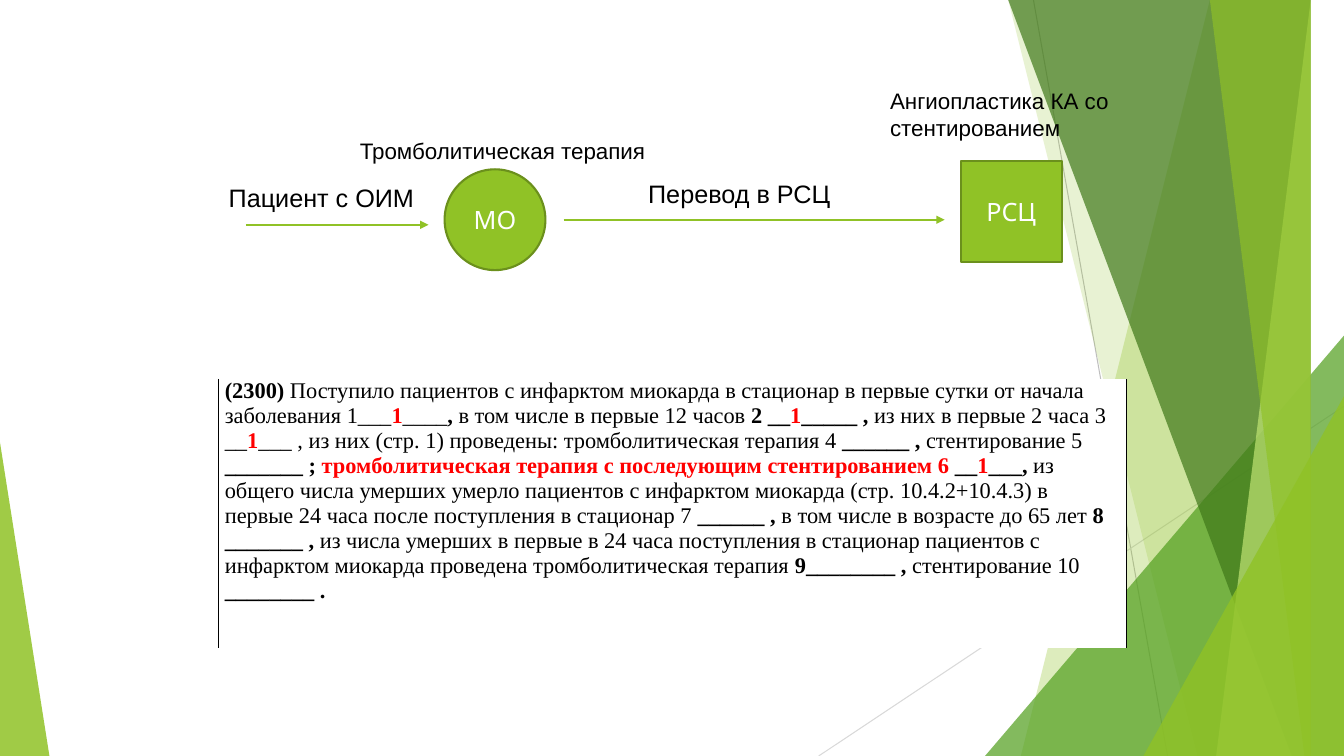
import pptx
import pptx.util
import pptx.oxml
import pptx.oxml.ns
import pptx.dml.color
import pptx.enum.shapes
import pptx.enum.text
from pptx.util import Inches

COLORS = {
    "green": "90C226", "leaf": "54A021", "forest": "3F7819", "lime": "C0E474",
    "outline": "6B901C", "gray": "BFBFBF", "pale": "D9D9D9",
    "black": "000000", "white": "FFFFFF", "red": "FF0000",
}
WIDTH, HEIGHT = 13.33, 7.5

# Backdrop, back to front
RAYS = [((10.25, 0), (11.58, HEIGHT), "gray"), ((WIDTH, 4.03), (8.12, HEIGHT), "pale")]
# Bands reach the right edge: top x, bottom x. Triangles: left, top, width, apex
BACKDROP = [
    ("band", (12.28, 10.04), "green", 30),
    ("band", (10.5, 11.83), "green", 20),
    ("triangle", (9.77, 3.33, 3.56, 1), "leaf", 72),
    ("band", (10.21, 12.91), "forest", 70),
    ("band", (13.03, 11.92), "lime", 70),
    ("band", (11.96, 13.18), "green", 65),
    ("triangle", (11.34, 3.93, 1.99, 1), "green", 80),
    ("triangle", (0, 4.39, 0.49, 0), "green", 85),
]

# Patient route
STATIONS = [("МО", "OVAL", 4.41, 1.68), ("РСЦ", "RECTANGLE", 9.53, 1.6)]
ARROWS = [(2.44, 4.25, 2.23), (5.59, 9.37, 2.18)]
LABELS = [
    ("Тромболитическая терапия", (3.47, 1.31, 4.53, 0.37), 16),
    ("Перевод в РСЦ", (6.33, 1.72, 4.02, 0.4), 18),
    ("Пациент с ОИМ", (2.17, 1.76, 2.17, 0.4), 18),
    ("Ангиопластика КА со стентированием", (8.73, 0.82, 2.6, 0.64), 16),
]

# Report form: text, bold, color
REPORT = [
    ("(2300)", True, "black"),
    (" Поступило пациентов с инфарктом миокарда в стационар в первые сутки "
     "от начала заболевания 1___", False, "black"),
    ("1", True, "red"),
    ("____", False, "black"),
    (", ", True, "black"),
    ("в том числе в первые 12 часов ", False, "black"),
    ("2 __", True, "black"),
    ("1", True, "red"),
    ("_____ , ", True, "black"),
    ("из них в первые 2 часа 3 __", False, "black"),
    ("1", True, "red"),
    ("___ , из них (стр. 1) проведены: тромболитическая терапия 4", False, "black"),
    (" ______ , ", True, "black"),
    ("стентирование 5", False, "black"),
    (" _______ ; ", True, "black"),
    ("тромболитическая терапия с последующим стентированием 6 ", True, "red"),
    ("__", True, "black"),
    ("1", True, "red"),
    ("___, ", True, "black"),
    ("из общего числа умерших умерло пациентов с инфарктом миокарда "
     "(стр. 10.4.2+10.4.3) в первые 24 часа после поступления в стационар 7",
     False, "black"),
    (" ______ , ", True, "black"),
    ("в том числе в возрасте до 65 лет", False, "black"),
    (" 8 _______ , ", True, "black"),
    ("из числа умерших в первые в 24 часа поступления в стационар пациентов "
     "с инфарктом миокарда проведена тромболитическая терапия ", False, "black"),
    ("9________ , ", True, "black"),
    ("стентирование 10", False, "black"),
    (" ________ .", True, "black"),
]
REPORT_PLACE = (2.17, 3.76, 9, 2.67)


def rgb(name):
    return pptx.dml.color.RGBColor.from_string(COLORS[name])


def add_span(para, text, size=16, font="Arial", color="black", bold=False):
    span = para.add_run()
    span.text = text
    span.font.size = pptx.util.Pt(size)
    span.font.name = font
    span.font.bold = bold
    span.font.color.rgb = rgb(color)


def paint(shape, color, opacity=100):
    shape.shadow.inherit = False
    shape.fill.solid()
    shape.fill.fore_color.rgb = rgb(color)
    shape.line.fill.background()
    if opacity < 100:
        tint = shape.fill._xPr.find(".//" + pptx.oxml.ns.qn("a:srgbClr"))
        alpha = pptx.oxml.parse_xml(
            f'<a:alpha {pptx.oxml.ns.nsdecls("a")} val="{opacity * 1000}"/>')
        tint.append(alpha)


def add_line(page, start, end, color, width, arrow=False):
    line = page.shapes.add_connector(
        pptx.enum.shapes.MSO_CONNECTOR.STRAIGHT, *map(Inches, start + end))
    line.line.color.rgb = rgb(color)
    line.line.width = pptx.util.Pt(width)
    namespace = pptx.oxml.ns.nsdecls("a")
    if arrow:
        line.line._get_or_add_ln().append(
            pptx.oxml.parse_xml(f'<a:tailEnd {namespace} type="triangle"/>'))
    line._element.spPr.append(pptx.oxml.parse_xml(f"<a:effectLst {namespace}/>"))


def add_backdrop(page):
    for start, end, color in RAYS:
        add_line(page, start, end, color, 0.75)
    for kind, place, color, opacity in BACKDROP:
        if kind == "band":
            top, bottom = place
            outline = page.shapes.build_freeform(top, 0, scale=Inches(1))
            outline.add_line_segments([(WIDTH, 0), (WIDTH, HEIGHT), (bottom, HEIGHT)])
            shape = outline.convert_to_shape()
        else:
            left, top, width, apex = place
            shape = page.shapes.add_shape(
                pptx.enum.shapes.MSO_SHAPE.ISOSCELES_TRIANGLE,
                *map(Inches, (left, top, width, HEIGHT - top)))
            shape.adjustments[0] = apex
        paint(shape, color, opacity)


def add_route(page):
    for text, kind, left, top in STATIONS:
        station = page.shapes.add_shape(
            pptx.enum.shapes.MSO_SHAPE[kind], *map(Inches, (left, top, 1, 1)))
        paint(station, "green")
        station.line.color.rgb = rgb("outline")
        station.line.width = pptx.util.Pt(1.5)
        station.text_frame.vertical_anchor = pptx.enum.text.MSO_ANCHOR.MIDDLE
        para = station.text_frame.paragraphs[0]
        para.alignment = pptx.enum.text.PP_ALIGN.CENTER
        add_span(para, text, size=18, font="Karla", color="white")
    for left, right, height in ARROWS:
        add_line(page, (left, height), (right, height), "green", 1.5, arrow=True)
    for text, place, size in LABELS:
        box = page.shapes.add_textbox(*map(Inches, place))
        box.text_frame.word_wrap = True
        box.text_frame.auto_size = pptx.enum.text.MSO_AUTO_SIZE.SHAPE_TO_FIT_TEXT
        add_span(box.text_frame.paragraphs[0], text, size=size)


def add_report(page):
    table = page.shapes.add_table(1, 1, *map(Inches, REPORT_PLACE)).table
    table.first_row = table.horz_banding = False
    cell = table.cell(0, 0)
    cell.margin_left = cell.margin_right = Inches(0.06)
    cell.margin_top = cell.margin_bottom = 0
    cell.fill.solid()
    cell.fill.fore_color.rgb = rgb("white")
    # Side borders only
    black = f'<a:solidFill><a:srgbClr val="{COLORS["black"]}"/></a:solidFill>'
    for index, side in enumerate("LRTB"):
        stroke = black if side in "LR" else "<a:noFill/>"
        border = pptx.oxml.parse_xml(
            f'<a:ln{side} {pptx.oxml.ns.nsdecls("a")} w="12700">{stroke}</a:ln{side}>')
        cell._tc.get_or_add_tcPr().insert(index, border)
    para = cell.text_frame.paragraphs[0]
    for text, bold, color in REPORT:
        add_span(para, text, font="Times New Roman", color=color, bold=bold)


def main():
    deck = pptx.Presentation()
    deck.slide_width, deck.slide_height = Inches(WIDTH), Inches(HEIGHT)
    page = deck.slides.add_slide(deck.slide_layouts[6])
    add_backdrop(page)
    add_route(page)
    add_report(page)
    deck.save("out.pptx")


if __name__ == "__main__":
    main()
